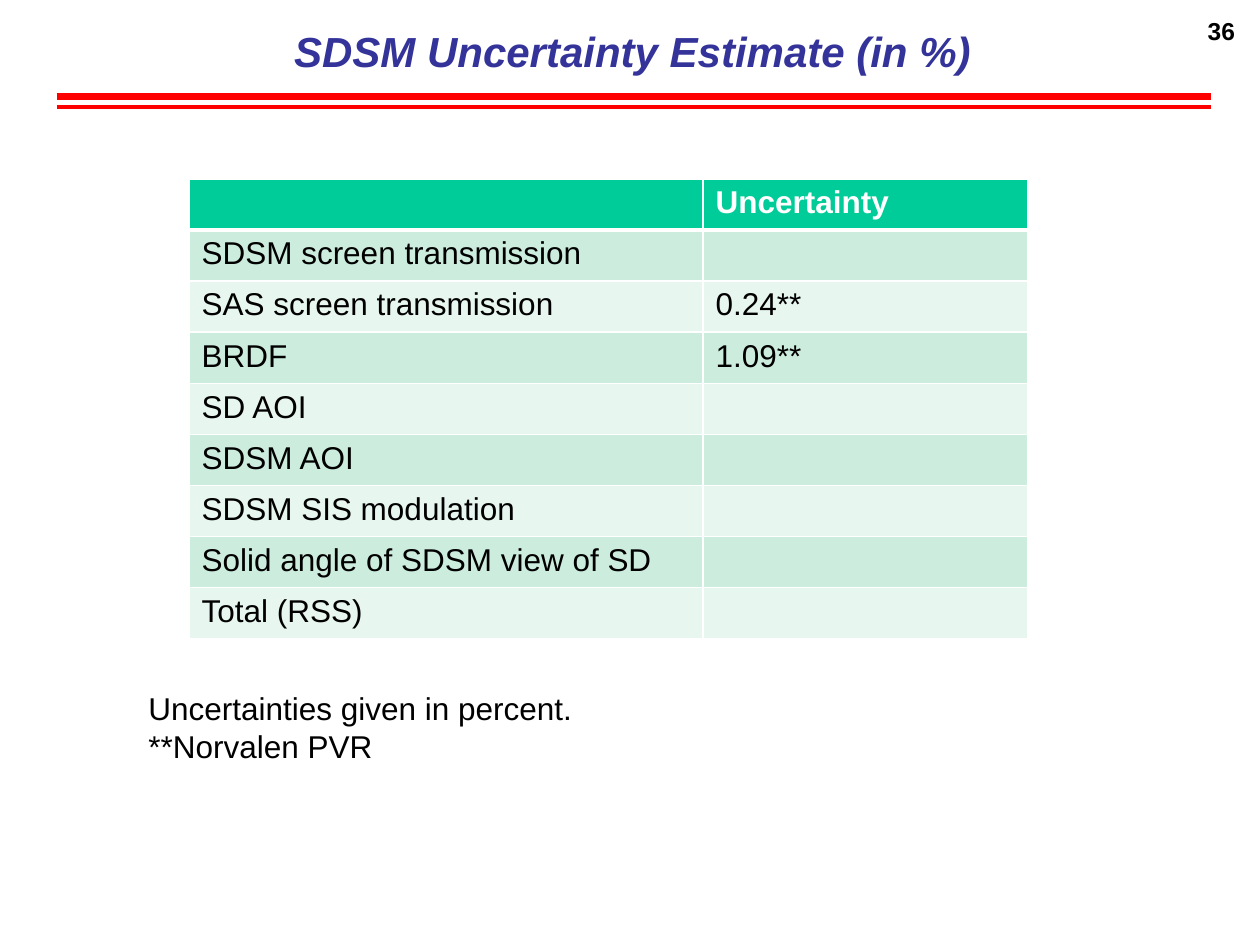
from dataclasses import dataclass

from lxml.etree import SubElement
from pptx import Presentation
from pptx.dml.color import RGBColor
from pptx.enum.shapes import MSO_CONNECTOR
from pptx.enum.text import MSO_ANCHOR, MSO_AUTO_SIZE, PP_ALIGN
from pptx.oxml import parse_xml
from pptx.oxml.ns import nsdecls, qn
from pptx.util import Pt

EMU_PER_PX = 9144


@dataclass(frozen=True)
class Theme:
    """Colours, font and type sizes of the slide."""

    font: str = "Arial"
    title_color: str = "333399"
    rule_color: str = "FF0000"
    text_color: str = "000000"
    white: str = "FFFFFF"
    header_fill: str = "00CC99"
    band_fills: tuple = ("CCECDE", "E7F6EF")
    title_size: int = 24
    body_size: int = 18
    number_size: int = 14


THEME = Theme()

UNCERTAINTY_ROWS = [
    ("", "Uncertainty"),
    ("SDSM screen transmission", ""),
    ("SAS screen transmission", "0.24**"),
    ("BRDF", "1.09**"),
    ("SD AOI", ""),
    ("SDSM AOI", ""),
    ("SDSM SIS modulation", ""),
    ("Solid angle of SDSM view of SD", ""),
    ("Total (RSS)", ""),
]


def px(*lengths):
    """Turn pixel lengths into a list of EMU lengths."""
    return [length * EMU_PER_PX for length in lengths]


def add_run(paragraph, text, size, color, bold=False, italic=False):
    """Add one formatted run to a paragraph."""
    run = paragraph.add_run()
    run.text = text
    font = run.font
    font.name, font.size = THEME.font, Pt(size)
    font.bold, font.italic = bold, italic
    font.color.rgb = RGBColor.from_string(color)


def place_title(slide, box, text):
    """Move the title placeholder into its box and fill it."""
    title = slide.shapes.title
    title.left, title.top, title.width, title.height = px(*box)
    frame = title.text_frame
    frame.auto_size = MSO_AUTO_SIZE.NONE
    frame.vertical_anchor = MSO_ANCHOR.MIDDLE
    paragraph = frame.paragraphs[0]
    paragraph.alignment = PP_ALIGN.CENTER
    add_run(paragraph, text, THEME.title_size, THEME.title_color, bold=True, italic=True)


def add_text(slide, box, lines, size, bold=False, alignment=PP_ALIGN.LEFT, wrap=True):
    """Add a text box with one paragraph for each line."""
    frame = slide.shapes.add_textbox(*px(*box)).text_frame
    frame.word_wrap = wrap
    for index, line in enumerate(lines):
        paragraph = frame.add_paragraph() if index else frame.paragraphs[0]
        paragraph.alignment = alignment
        add_run(paragraph, line, size, THEME.text_color, bold=bold)


def add_double_rule(slide, box):
    """Add a thick rule along the top of the box and a thin one along its bottom."""
    left, top, width, height = box
    group = slide.shapes.add_group_shape()
    for y, weight in ((top, 4), (top + height, 2)):
        rule = group.shapes.add_connector(
            MSO_CONNECTOR.STRAIGHT, *px(left, y, left + width, y)
        )
        rule.line.color.rgb = RGBColor.from_string(THEME.rule_color)
        rule.line.width = Pt(weight)
        SubElement(rule.element.spPr, qn("a:effectLst"))


def set_borders(cell, top, bottom):
    """Give a cell white borders, with the weights of its top and bottom in points."""
    properties = cell._tc.get_or_add_tcPr()
    weights = (("lnL", 1), ("lnR", 1), ("lnT", top), ("lnB", bottom))
    for index, (tag, weight) in enumerate(weights):
        border = parse_xml(
            f'<a:{tag} {nsdecls("a")} w="{Pt(weight)}"><a:solidFill>'
            f'<a:srgbClr val="{THEME.white}"/></a:solidFill></a:{tag}>'
        )
        properties.insert(index, border)


def add_uncertainty_table(slide, box, column_widths, rows):
    """Add the banded table, sharing its height evenly among the rows."""
    table = slide.shapes.add_table(len(rows), len(column_widths), *px(*box)).table
    table.first_row = table.horz_banding = False
    for column, width in zip(table.columns, px(*column_widths)):
        column.width = width
    for row_index, values in enumerate(rows):
        is_header = row_index == 0
        table.rows[row_index].height = px(box[3])[0] // len(rows)
        fill = THEME.header_fill if is_header else THEME.band_fills[(row_index - 1) % 2]
        color = THEME.white if is_header else THEME.text_color
        for column_index, value in enumerate(values):
            cell = table.cell(row_index, column_index)
            cell.fill.solid()
            cell.fill.fore_color.rgb = RGBColor.from_string(fill)
            set_borders(cell, 3 if row_index == 1 else 1, 3 if is_header else 1)
            if value:
                paragraph = cell.text_frame.paragraphs[0]
                add_run(paragraph, value, THEME.body_size, color, bold=is_header)


def main():
    """Build the slide and save it."""
    presentation = Presentation()
    presentation.slide_width, presentation.slide_height = px(1000, 750)
    slide = presentation.slides.add_slide(presentation.slide_layouts[5])
    add_text(slide, (918, 8, 72, 51), ["36"], THEME.number_size,
             bold=True, alignment=PP_ALIGN.RIGHT)
    place_title(slide, (52, 15, 900, 50), "SDSM Uncertainty Estimate (in %)")
    add_double_rule(slide, (45, 77, 916, 8))
    add_uncertainty_table(slide, (150, 142, 666, 365), (408, 258), UNCERTAINTY_ROWS)
    add_text(slide, (108, 542, 360, 71),
             ["Uncertainties given in percent.", "**Norvalen PVR"],
             THEME.body_size, wrap=False)
    presentation.save("out.pptx")


if __name__ == "__main__":
    main()
